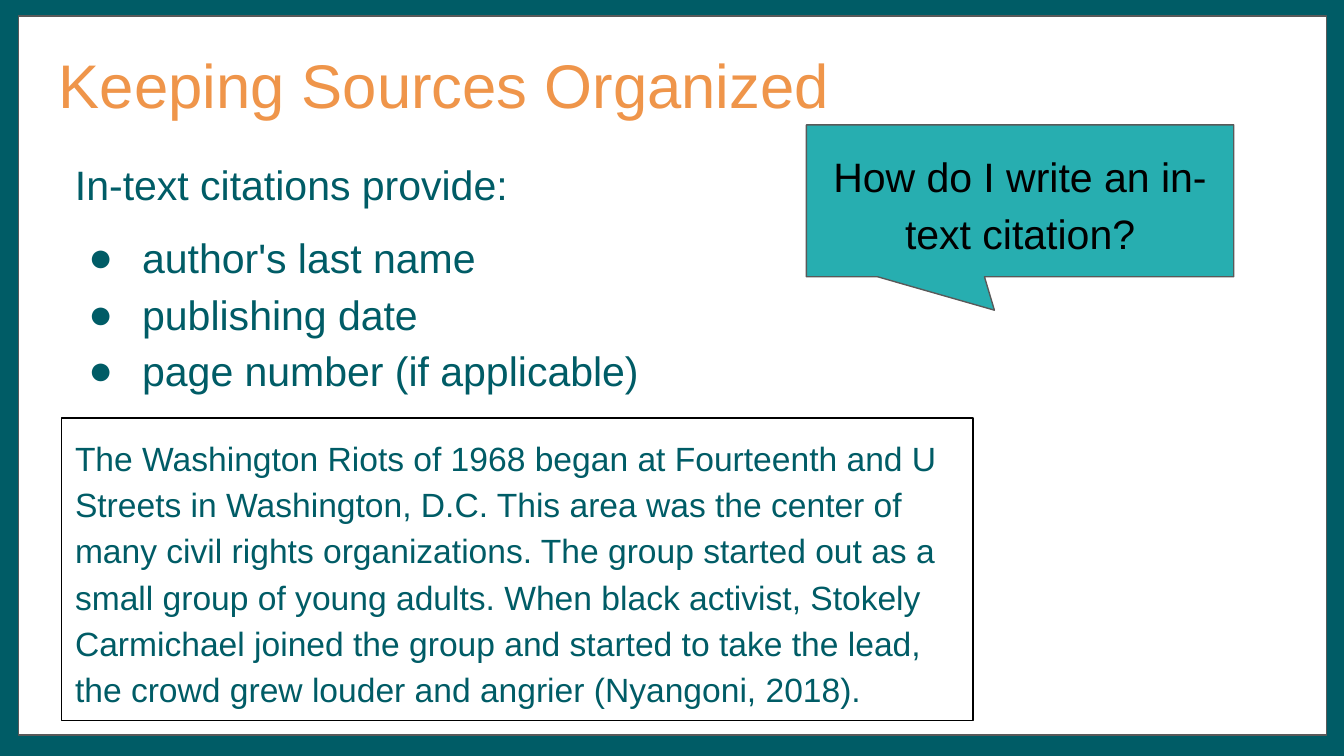
from dataclasses import dataclass

from lxml import etree
from pptx import Presentation
from pptx import util as u
from pptx.dml.color import RGBColor
from pptx.enum import shapes, text
from pptx.oxml import ns


@dataclass(frozen=True)
class Theme:
    font: str = "Arial"
    teal: str = "005C66"
    aqua: str = "27AEB0"
    orange: str = "EF954A"
    white: str = "FFFFFF"
    black: str = "000000"
    grey: str = "595959"
    title_size: int = 33
    body_size: int = 22
    passage_size: int = 18
    spacing: float = 1.15
    line_width: float = 0.75


THEME = Theme()

PASSAGE = (
    "The Washington Riots of 1968 began at Fourteenth and U Streets in Washington, D.C. "
    "This area was the center of many civil rights organizations. The group started out "
    "as a small group of young adults. When black activist, Stokely Carmichael joined the "
    "group and started to take the lead, the crowd grew louder and angrier (Nyangoni, 2018)."
)


def rgb(color):
    return RGBColor.from_string(color)


def add_panel(slide, box, line, fill=None, kind=shapes.MSO_SHAPE.RECTANGLE):
    panel = slide.shapes.add_shape(kind, *map(u.Inches, box))
    panel.shadow.inherit = False
    if fill:
        panel.fill.solid()
        panel.fill.fore_color.rgb = rgb(fill)
    else:
        panel.fill.background()
    panel.line.color.rgb = rgb(line)
    panel.line.width = u.Pt(THEME.line_width)
    return panel


def add_text_area(slide, box):
    return slide.shapes.add_textbox(*map(u.Inches, box))


def prepare_frame(holder, anchor=text.MSO_ANCHOR.TOP):
    frame = holder.text_frame
    frame.word_wrap = True
    frame.vertical_anchor = anchor
    frame.margin_left = frame.margin_right = u.Inches(0.1)
    frame.margin_top = frame.margin_bottom = u.Inches(0.1)
    return frame


def write(paragraph, words, size, color, align=text.PP_ALIGN.LEFT, before=0, after=0):
    paragraph.alignment = align
    paragraph.line_spacing = THEME.spacing
    paragraph.space_before = u.Pt(before)
    paragraph.space_after = u.Pt(after)
    run = paragraph.add_run()
    run.text = words
    run.font.name = THEME.font
    run.font.size = u.Pt(size)
    run.font.color.rgb = rgb(color)


def add_bullet(paragraph, size, color):
    properties = paragraph._p.get_or_add_pPr()
    properties.set("marL", str(u.Inches(0.5)))
    properties.set("indent", str(u.Inches(-0.4)))
    bullet_color = etree.SubElement(properties, ns.qn("a:buClr"))
    etree.SubElement(bullet_color, ns.qn("a:srgbClr"), val=color)
    etree.SubElement(properties, ns.qn("a:buSzPts"), val=str(size * 100))
    etree.SubElement(properties, ns.qn("a:buFont"), typeface=THEME.font)
    etree.SubElement(properties, ns.qn("a:buChar"), char="●")


def add_title(slide):
    frame = prepare_frame(add_text_area(slide, (0.34, 0.17, 9.32, 0.76)))
    write(frame.paragraphs[0], "Keeping Sources Organized", THEME.title_size, THEME.orange)


def add_citation_parts(slide):
    frame = prepare_frame(add_text_area(slide, (0.46, 1.03, 4.73, 1.98)))
    write(frame.paragraphs[0], "In-text citations provide:", THEME.body_size, THEME.teal)
    parts = ("author's last name", "publishing date", "page number (if applicable)")
    for index, part in enumerate(parts):
        item = frame.add_paragraph()
        write(item, part, THEME.body_size, THEME.teal, before=0 if index else 9)
        add_bullet(item, THEME.body_size, THEME.teal)


def add_question(slide):
    callout = add_panel(slide, (6, 0.93, 3.18, 1.13), THEME.grey, THEME.aqua,
                        shapes.MSO_SHAPE.ROUNDED_RECTANGULAR_CALLOUT)
    for index, value in enumerate((-0.06, 0.72, 0)):
        callout.adjustments[index] = value
    frame = prepare_frame(callout, text.MSO_ANCHOR.MIDDLE)
    write(frame.paragraphs[0], "How do I write an in-text citation?",
          THEME.body_size, THEME.black, align=text.PP_ALIGN.CENTER)


def add_passage(slide):
    frame = prepare_frame(add_panel(slide, (0.46, 3.11, 6.78, 2.25), THEME.black))
    write(frame.paragraphs[0], PASSAGE, THEME.passage_size, THEME.teal, after=9)


def main():
    deck = Presentation()
    deck.slide_width = u.Inches(10)
    deck.slide_height = deck.slide_width * 9 // 16
    slide = deck.slides.add_slide(deck.slide_layouts[6])
    slide.background.fill.solid()
    slide.background.fill.fore_color.rgb = rgb(THEME.teal)
    add_panel(slide, (0.14, 0.12, 9.73, 5.35), THEME.grey, THEME.white)
    add_title(slide)
    add_citation_parts(slide)
    add_question(slide)
    add_passage(slide)
    deck.save("out.pptx")


if __name__ == "__main__":
    main()
